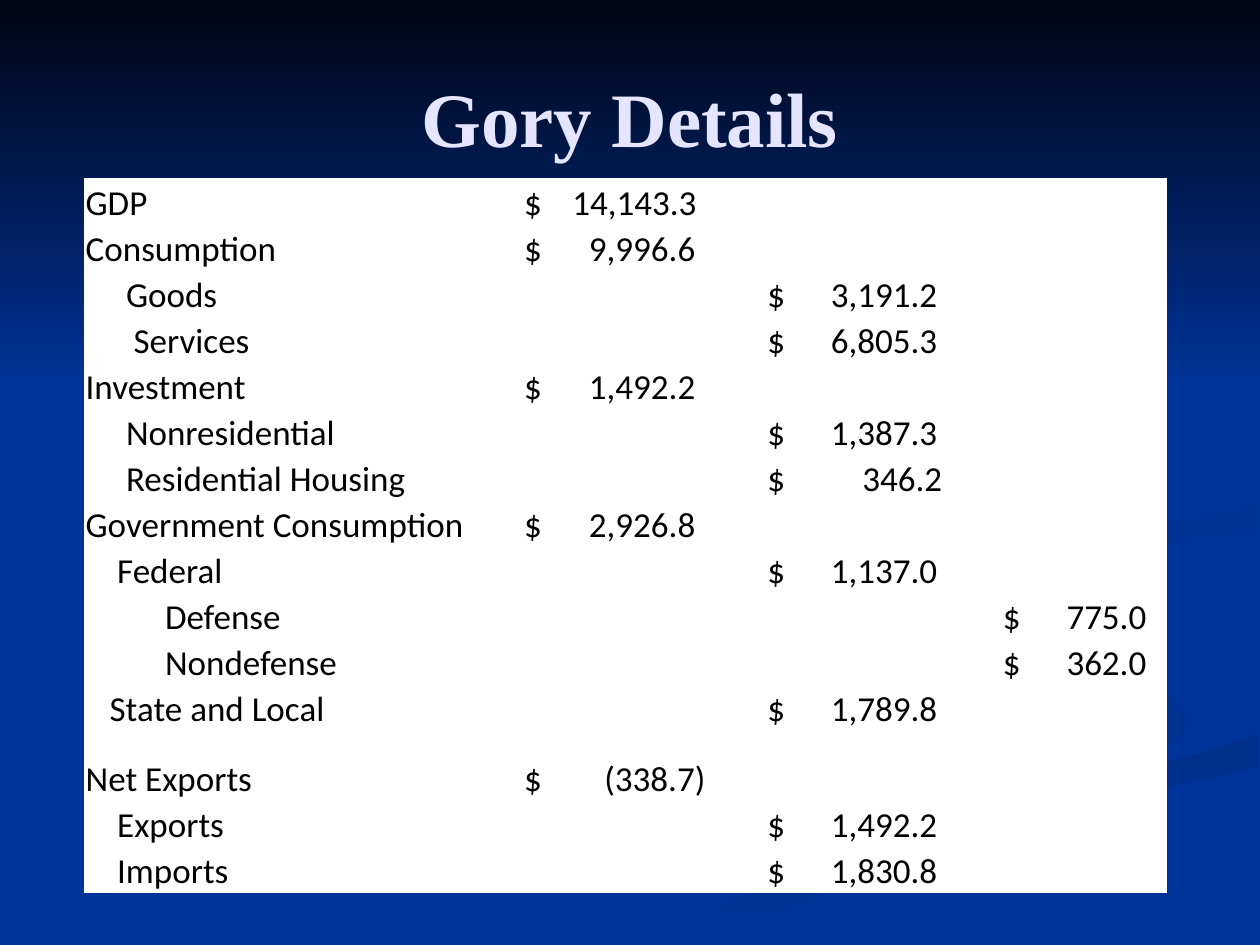
from lxml.etree import SubElement
from pptx import Presentation
from pptx.dml.color import RGBColor
from pptx.enum.text import MSO_ANCHOR, PP_ALIGN
from pptx.oxml.ns import qn
from pptx.util import Emu, Pt

SCALE = 9144
BLUE = RGBColor(0x00, 0x33, 0x99)
NIGHT = RGBColor(0x00, 0x05, 0x14)
DUSK = RGBColor(0x00, 0x2F, 0x8C)
SHADE = RGBColor(0x00, 0x2F, 0x8E)
HAZE = RGBColor(0x00, 0x30, 0x91)
MIST = RGBColor(0x00, 0x31, 0x93)
WHITE = RGBColor(0xFF, 0xFF, 0xFF)
BLACK = RGBColor(0x00, 0x00, 0x00)
LILAC = RGBColor(0xE5, 0xE5, 0xFF)

BODY = {"name": "Calibri", "size": Pt(20), "bold": False}
TITLE = {"name": "Times New Roman", "size": Pt(44), "bold": True}

LEFT_TAIL = [
    (781, 553), (767, 547), (745, 538), (715, 528), (661, 513), (626, 502), (602, 490),
    (587, 481), (579, 473), (575, 466), (575, 459), (570, 468), (572, 476), (581, 484),
    (593, 491), (611, 499), (654, 513), (697, 525), (728, 535), (752, 543), (776, 553),
    (783, 559), (786, 566), (783, 574), (774, 583), (759, 590), (739, 598), (714, 605),
    (684, 613), (616, 629), (539, 649), (458, 674), (376, 707), (338, 727), (300, 749),
    (361, 749), (431, 714), (499, 687), (564, 665), (623, 647), (676, 634), (721, 623),
    (756, 614), (780, 605), (791, 597), (797, 588), (800, 581), (795, 567), (786, 556),
]
RIGHT_TAIL = [
    (943, 570), (939, 562), (930, 553), (905, 540), (870, 530), (830, 519), (792, 509),
    (758, 498), (733, 483), (727, 474), (724, 464), (725, 474), (733, 488), (746, 500),
    (766, 512), (797, 524), (838, 536), (868, 544), (892, 553), (907, 562), (915, 571),
    (918, 581), (914, 589), (907, 597), (894, 605), (916, 597), (932, 589), (941, 581),
]
LOWER_BAND = [
    (519, 747), (503, 749), (571, 749), (587, 740), (614, 726), (649, 710), (695, 692),
    (752, 672), (821, 651), (903, 630), (998, 609), (998, 581), (985, 587), (963, 594),
    (936, 602), (903, 610), (831, 629), (764, 647), (696, 669), (630, 693), (569, 719),
    (543, 733),
]
MAIN_RIBBON = [
    (725, 464), (728, 474), (734, 483), (759, 498), (793, 509), (831, 519), (871, 530),
    (905, 540), (931, 553), (939, 562), (943, 570), (942, 579), (936, 587), (926, 593),
    (911, 600), (892, 605), (869, 611), (812, 625), (743, 643), (663, 668), (573, 703),
    (477, 749), (503, 749), (519, 747), (570, 719), (630, 693), (696, 669), (765, 647),
    (832, 629), (904, 610), (936, 602), (964, 594), (986, 587), (999, 581), (999, 538),
    (974, 534), (941, 527), (904, 519), (866, 509), (832, 498), (804, 485), (786, 473),
    (781, 463), (786, 453), (800, 442), (822, 434), (850, 427), (899, 418), (968, 409),
    (999, 402), (999, 387), (962, 395), (920, 401), (851, 411), (788, 422), (755, 432),
    (732, 446), (727, 454),
]
UPPER_BAND = [
    (781, 460), (782, 469), (791, 478), (806, 487), (826, 496), (812, 487), (806, 480),
    (805, 472), (809, 466), (816, 459), (843, 448), (878, 439), (936, 429), (971, 423),
    (998, 420), (998, 402), (967, 409), (898, 418), (849, 427), (821, 434), (799, 442),
    (785, 453),
]
TOP_CURL = [
    (683, 430), (739, 421), (786, 412), (825, 402), (855, 391), (876, 378), (889, 362),
    (894, 344), (890, 324), (880, 307), (864, 291), (843, 275), (810, 256), (780, 241),
    (762, 233), (805, 254), (846, 279), (862, 292), (876, 306), (885, 320), (889, 335),
    (886, 348), (876, 360), (861, 370), (842, 378), (818, 386), (763, 398), (704, 409),
    (649, 420), (615, 429), (597, 437), (584, 446), (577, 462), (580, 474), (590, 484),
    (604, 492), (622, 500), (607, 490), (597, 480), (593, 470), (596, 461), (606, 452),
    (624, 444), (649, 436),
]
SKY = [(0, 0), (0, 308), (1000, 308), (1000, 0)]

BACKDROP = [
    (LEFT_TAIL, BLUE, MIST, 0),
    (RIGHT_TAIL, BLUE, MIST, 45),
    (LOWER_BAND, DUSK, BLUE, 90),
    (MAIN_RIBBON, BLUE, BLUE, 0),
    (UPPER_BAND, HAZE, BLUE, 45),
    (TOP_CURL, SHADE, BLUE, 45),
    (SKY, NIGHT, BLUE, 90),
]

COLUMNS = [342, 193, 187, 137]
TABS = [0, 136, 135, 114]
TABLE_HEIGHT = 567
TALL_ROW, TALL_HEIGHT = 12, 55
ACCOUNTS = [
    ("GDP", 0, 1, "14,143.3", 1),
    ("Consumption", 0, 1, "9,996.6", 0),
    ("Goods", 32, 2, "3,191.2", 0),
    ("Services", 38, 2, "6,805.3", 0),
    ("Investment", 0, 1, "1,492.2", 0),
    ("Nonresidential", 32, 2, "1,387.3", 0),
    ("Residential Housing", 32, 2, "346.2", 4),
    ("Government Consumption", 0, 1, "2,926.8", 0),
    ("Federal", 25, 2, "1,137.0", 0),
    ("Defense", 63, 3, "775.0", 0),
    ("Nondefense", 63, 3, "362.0", 0),
    ("State and Local", 19, 2, "1,789.8", 0),
    ("Net Exports", 0, 1, "(338.7)", 8),
    ("Exports", 25, 2, "1,492.2", 0),
    ("Imports", 25, 2, "1,830.8", 0),
]


def px(value):
    return Emu(round(value * SCALE))


def add_run(p, text, style, color):
    r = p.add_run()
    r.text = text
    for name, value in style.items():
        setattr(r.font, name, value)
    r.font.color.rgb = color


def add_swoosh(s, points, start, end, angle):
    builder = s.shapes.build_freeform(*points[0], scale=SCALE)
    builder.add_line_segments(points[1:], close=True)
    sp = builder.convert_to_shape()
    sp.shadow.inherit = False
    sp.line.fill.background()
    if start == end:
        sp.fill.solid()
        sp.fill.fore_color.rgb = start
        return
    sp.fill.gradient()
    sp.fill.gradient_angle = -angle % 360
    for stop, color in zip(sp.fill.gradient_stops, (start, end)):
        stop.color.rgb = color


def add_title(s, text):
    tf = s.shapes.add_textbox(px(50), px(30), px(900), px(125)).text_frame
    tf.word_wrap = True
    tf.vertical_anchor = MSO_ANCHOR.MIDDLE
    p = tf.paragraphs[0]
    p.alignment = PP_ALIGN.CENTER
    add_run(p, text, TITLE, LILAC)


def format_cell(cell):
    cell.fill.solid()
    cell.fill.fore_color.rgb = WHITE
    cell.vertical_anchor = MSO_ANCHOR.BOTTOM
    margins = {"left": 1, "right": 1, "top": 1, "bottom": 0}
    for side, value in margins.items():
        setattr(cell, f"margin_{side}", px(value))


def fill_cell(cell, text, indent, tab=None):
    cell.margin_left = px(1 + indent)
    p = cell.text_frame.paragraphs[0]
    if tab:
        tabs = SubElement(p._p.get_or_add_pPr(), qn("a:tabLst"))
        SubElement(tabs, qn("a:tab"), pos=str(px(tab)), algn="r")
    add_run(p, text, BODY, BLACK)


def add_accounts(s):
    frame = s.shapes.add_table(len(ACCOUNTS), len(COLUMNS), px(67), px(142),
                               px(sum(COLUMNS)), px(TABLE_HEIGHT))
    table = frame.table
    table.first_row = table.horz_banding = False
    for column, width in zip(table.columns, COLUMNS):
        column.width = px(width)
    row_height = (TABLE_HEIGHT - TALL_HEIGHT) / (len(ACCOUNTS) - 1)
    for i, row in enumerate(table.rows):
        row.height = px(TALL_HEIGHT if i == TALL_ROW else row_height)
    for cell in table.iter_cells():
        format_cell(cell)
    for i, (label, indent, column, amount, shift) in enumerate(ACCOUNTS):
        fill_cell(table.cell(i, 0), label, indent)
        fill_cell(table.cell(i, column), f"$\t{amount}", 6, TABS[column] + shift)


def main():
    prs = Presentation()
    prs.slide_width, prs.slide_height = px(1000), px(750)
    s = prs.slides.add_slide(prs.slide_layouts[6])
    s.background.fill.solid()
    s.background.fill.fore_color.rgb = BLUE
    for swoosh in BACKDROP:
        add_swoosh(s, *swoosh)
    add_accounts(s)
    add_title(s, "Gory Details")
    prs.save("out.pptx")


if __name__ == "__main__":
    main()
